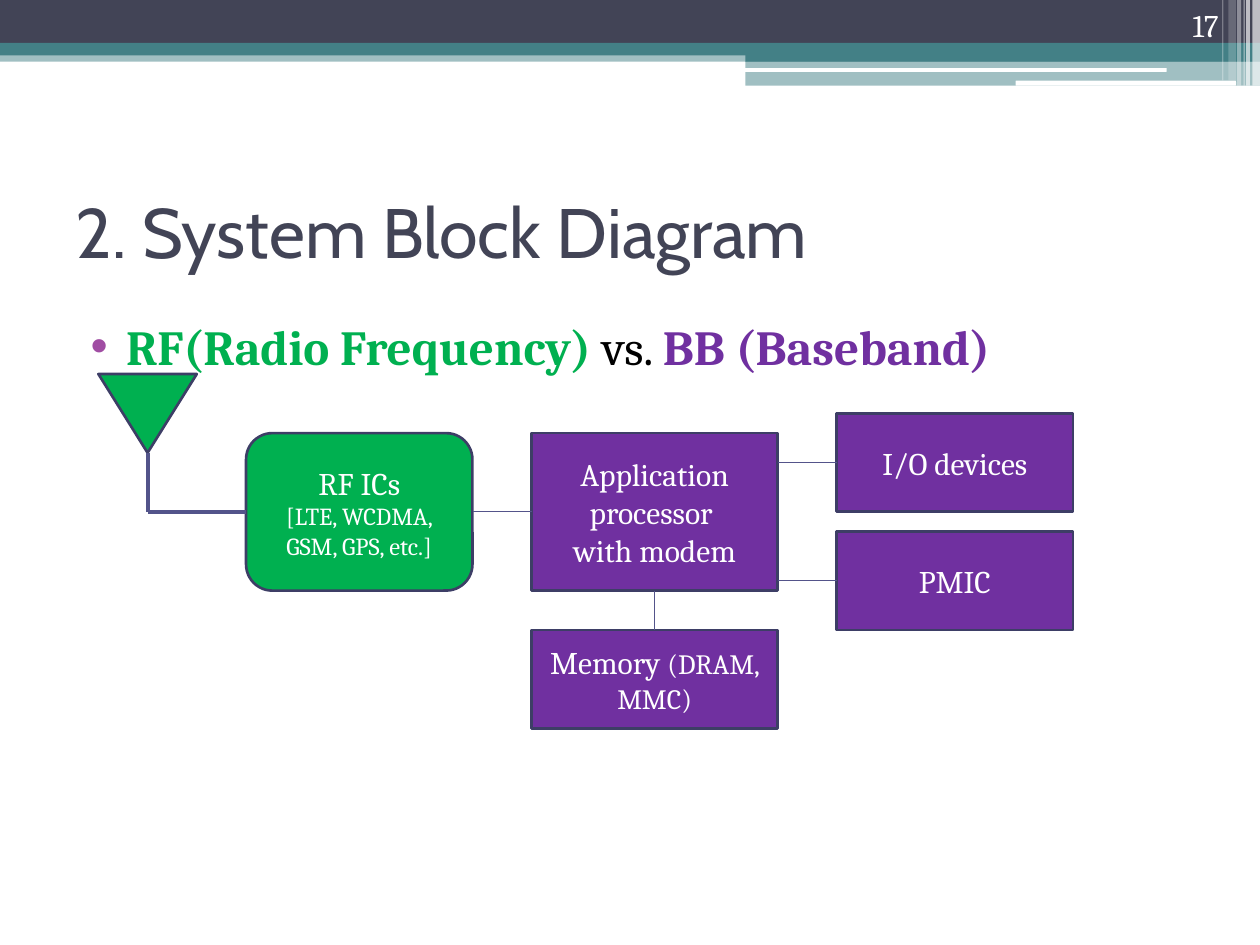
"""Build the System Block Diagram slide."""
from pptx import Presentation
from pptx import util as u
from pptx.dml.color import RGBColor
from pptx.enum import shapes, text
from pptx.oxml import ns, xmlchemy

SLATE = RGBColor(0x42, 0x44, 0x56)
TEAL = RGBColor(0x43, 0x80, 0x86)
WHITE = RGBColor(0xFF, 0xFF, 0xFF)
BLACK = RGBColor(0, 0, 0)
GREEN = RGBColor(0x00, 0xB0, 0x50)
PURPLE = RGBColor(0x70, 0x30, 0xA0)
OUTLINE = RGBColor(0x3D, 0x3E, 0x66)
WIRE = RGBColor(0x53, 0x54, 0x8A)
BULLET = RGBColor(0xA0, 0x4D, 0xA3)

RECT = shapes.MSO_SHAPE.RECTANGLE
ROUND = shapes.MSO_SHAPE.ROUNDED_RECTANGLE
TRIANGLE = shapes.MSO_SHAPE.FLOWCHART_MERGE
TOP, LEFT, BOTTOM, RIGHT = range(4)

BANDS = [
    (RECT, 0, 28.8, 720, 6.5, TEAL, 50),
    (RECT, 0, 0, 720, 24.5, SLATE, 100),
    (RECT, 0, 24.5, 720, 7.2, TEAL, 100),
    (RECT, 426, 28, 294, 7.2, TEAL, 100),
    (RECT, 426, 35, 294, 14, TEAL, 50),
    (ROUND, 425.5, 38.9, 241.2, 2.2, WHITE, 100),
    (ROUND, 580.3, 46.1, 126, 2.9, WHITE, 100),
]
STRIPES = [
    (715.7, 4.3, 49, 65), (712.1, 2.2, 49, 65), (710.6, 0.7, 49, 60),
    (707, 2.2, 49, 40), (702, 4.3, 46, 20), (698.4, 0.7, 46, 30),
]


def set_values(target, values):
    """Set every named format value on the target."""
    for name, value in values.items():
        setattr(target, name, value)


def add_run(paragraph, words, size, color, font="Cambria", bold=False):
    """Append a formatted run to the paragraph."""
    run = paragraph.add_run()
    run.text = words
    set_values(run.font, {"name": font, "size": u.Pt(size), "bold": bold})
    run.font.color.rgb = color


def place(shape, left, top, width, height):
    """Move and size a shape, in points."""
    box = {"left": left, "top": top, "width": width, "height": height}
    set_values(shape, {name: u.Pt(value) for name, value in box.items()})


def add_panel(slide, kind, left, top, width, height, color, opacity=100):
    """Add a filled shape without outline or shadow."""
    shape = slide.shapes.add_shape(kind, *map(u.Pt, (left, top, width, height)))
    shape.shadow.inherit = False
    shape.fill.solid()
    shape.fill.fore_color.rgb = color
    if opacity < 100:
        fill = shape._element.spPr.find(".//" + ns.qn("a:srgbClr"))
        alpha = xmlchemy.OxmlElement("a:alpha")
        alpha.set("val", str(opacity * 1000))
        fill.append(alpha)
    shape.line.fill.background()
    return shape


def add_block(slide, kind, box, color, paragraphs=()):
    """Add an outlined diagram block with centred paragraphs of runs."""
    shape = add_panel(slide, kind, *box, color)
    shape.line.color.rgb = OUTLINE
    shape.line.width = u.Pt(1.5)
    frame = shape.text_frame
    set_values(frame, {"word_wrap": True, "vertical_anchor": text.MSO_ANCHOR.MIDDLE})
    for index, runs in enumerate(paragraphs):
        paragraph = frame.add_paragraph() if index else frame.paragraphs[0]
        paragraph.alignment = text.PP_ALIGN.CENTER
        for words, size in runs:
            add_run(paragraph, words, size, WHITE)
    return shape


def add_wire(slide, start, end, width=0.75, begin=None, finish=None):
    """Add a straight line, joined to a (shape, side) where one is given."""
    wire = slide.shapes.add_connector(
        shapes.MSO_CONNECTOR.STRAIGHT, *map(u.Pt, (*start, *end)))
    wire.line.color.rgb = WIRE
    wire.line.width = u.Pt(width)
    wire._element.spPr.append(xmlchemy.OxmlElement("a:effectLst"))
    if begin:
        wire.begin_connect(*begin)
    if finish:
        wire.end_connect(*finish)


def add_header(slide):
    """Draw the header bands, stripes and slide number."""
    for band in BANDS:
        add_panel(slide, *band)
    for left, width, height, opacity in STRIPES:
        add_panel(slide, RECT, left, 0, width, height, WHITE, opacity)
    number = slide.shapes.add_textbox(*map(u.Pt, (643.7, 0, 59.8, 28.8)))
    frame = number.text_frame
    set_values(frame, {"word_wrap": True, "vertical_anchor": text.MSO_ANCHOR.BOTTOM})
    frame.paragraphs[0].alignment = text.PP_ALIGN.RIGHT
    add_run(frame.paragraphs[0], "17", 18, WHITE)


def fill_title(title):
    """Place and write the slide title."""
    place(title, 36, 90, 648, 84)
    frame = title.text_frame
    set_values(frame, {"vertical_anchor": text.MSO_ANCHOR.MIDDLE,
                       "auto_size": text.MSO_AUTO_SIZE.NONE})
    frame.paragraphs[0].alignment = text.PP_ALIGN.LEFT
    add_run(frame.paragraphs[0], "2. System Block Diagram", 40, SLATE, "Cabin")


def fill_body(body):
    """Place and write the bulleted line."""
    place(body, 36, 177, 648, 340.5)
    body.text_frame.auto_size = text.MSO_AUTO_SIZE.NONE
    paragraph = body.text_frame.paragraphs[0]
    paragraph.space_before = u.Pt(3)
    properties = paragraph._p.get_or_add_pPr()
    properties.set("marL", str(u.Pt(28.8)))
    properties.set("indent", str(u.Pt(-20.2)))
    bullet_color = xmlchemy.OxmlElement("a:buClr")
    color = xmlchemy.OxmlElement("a:srgbClr")
    color.set("val", str(BULLET))
    bullet_color.append(color)
    bullet = xmlchemy.OxmlElement("a:buChar")
    bullet.set("char", "•")
    properties.extend([bullet_color, bullet])
    add_run(paragraph, "RF(Radio Frequency) ", 28, GREEN, bold=True)
    add_run(paragraph, "vs. ", 28, BLACK)
    add_run(paragraph, "BB (Baseband)", 28, PURPLE, bold=True)


def add_diagram(slide):
    """Draw the blocks, the antenna and their wires."""
    processor = add_block(slide, RECT, (303.75, 247.5, 140.63, 90), PURPLE,
                          [[("Application processor ", 18)], [("with modem", 18)]])
    radio = add_block(slide, ROUND, (140.63, 247.5, 129.38, 90), GREEN,
                      [[("RF ICs", 18)], [("[LTE, WCDMA, GSM, GPS, etc.]", 14)]])
    memory = add_block(slide, RECT, (303.75, 360, 140.63, 56.25), PURPLE,
                       [[("Memory ", 18), ("(DRAM, MMC)", 16)]])
    for label, top in (("I/O devices", 236.25), ("PMIC", 303.75)):
        add_block(slide, RECT, (478.13, top, 135, 56.25), PURPLE, [[(label, 18)]])
        middle = top + 28.13
        add_wire(slide, (444.38, middle), (478.13, middle))
    add_block(slide, TRIANGLE, (56.25, 213.75, 56.25, 45), GREEN)
    add_wire(slide, (84.38, 258.75), (84.38, 292.5), 2.25)
    add_wire(slide, (84.38, 292.5), (140.63, 292.5), 2.25, finish=(radio, LEFT))
    add_wire(slide, (270, 292.5), (303.75, 292.5),
             begin=(radio, RIGHT), finish=(processor, LEFT))
    add_wire(slide, (374.06, 337.5), (374.06, 360),
             begin=(processor, BOTTOM), finish=(memory, TOP))


def main():
    """Build and save the presentation."""
    presentation = Presentation()
    set_values(presentation, {"slide_width": u.Pt(720), "slide_height": u.Pt(540)})
    slide = presentation.slides.add_slide(presentation.slide_layouts[1])
    fill_title(slide.shapes.title)
    fill_body(slide.placeholders[1])
    add_header(slide)
    add_diagram(slide)
    presentation.save("out.pptx")


if __name__ == "__main__":
    main()
